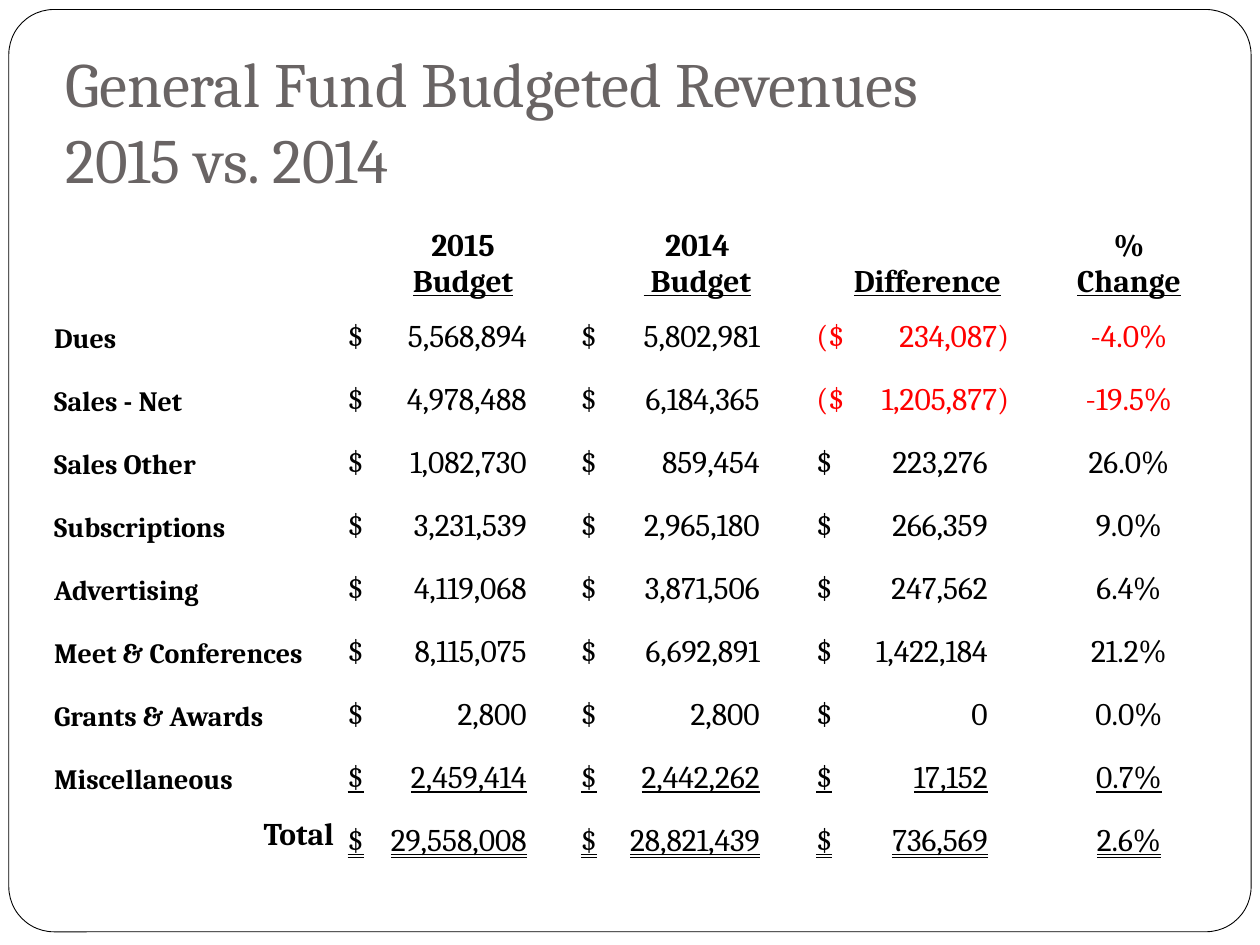
from dataclasses import dataclass
from typing import NamedTuple, Optional

from lxml.etree import SubElement
from pptx import Presentation
from pptx.dml.color import RGBColor
from pptx.enum.shapes import MSO_SHAPE as Shape
from pptx.enum.text import MSO_ANCHOR as Anchor, MSO_UNDERLINE as Underline, PP_ALIGN as Align
from pptx.oxml.ns import qn
from pptx.util import Inches, Pt


@dataclass(frozen=True)
class Theme:
    font: str = "Cambria"
    ink: RGBColor = RGBColor(0x00, 0x00, 0x00)
    title_ink: RGBColor = RGBColor(0x69, 0x64, 0x64)
    loss_ink: RGBColor = RGBColor(0xFF, 0x00, 0x00)
    paper: RGBColor = RGBColor(0xFF, 0xFF, 0xFF)
    title_size: int = 36
    figure_size: int = 18
    label_size: int = 16


class Area(NamedTuple):
    """Left, top, width and height as shares of the slide's size."""
    left: float
    top: float
    width: float
    height: float


class Column(NamedTuple):
    """Heading lines, width, and right-aligned tab stop, in inches."""
    heading: tuple[str, ...]
    width: float
    stop: Optional[float] = None


class Revenue(NamedTuple):
    label: str
    figures: tuple[str, str, str, str]
    underline: object = None


THEME = Theme()
SLIDE_WIDTH, SLIDE_HEIGHT = Inches(10), Inches(7.5)
FRAME = Area(0.007, 0.01, 0.986, 0.976)
TITLE = Area(0.042, 0.044, 0.896, 0.177)
TABLE = Area(0.042, 0.21, 0.925, 0.7)
HEADING_HEIGHT, FIRST_HEIGHT = Inches(0.81), Inches(0.44)
TIGHT = (0.01, 0.01, 0.01, 0)
ROOMY = (0.1, 0.05, 0.1, 0.05)
PARENTHESIS_OVERHANG = 0.17

COLUMNS = (
    Column((), 2.33),
    Column(("2015", "Budget"), 1.85, 1.42),
    Column(("2014", " Budget"), 1.87, 1.42),
    Column(("Difference",), 1.78, 1.36),
    Column(("%", "Change"), 1.42),
)
REVENUES = (
    Revenue("Dues", ("5,568,894", "5,802,981", "(234,087)", "-4.0%")),
    Revenue("Sales - Net", ("4,978,488", "6,184,365", "(1,205,877)", "-19.5%")),
    Revenue("Sales Other", ("1,082,730", "859,454", "223,276", "26.0%")),
    Revenue("Subscriptions", ("3,231,539", "2,965,180", "266,359", "9.0%")),
    Revenue("Advertising", ("4,119,068", "3,871,506", "247,562", "6.4%")),
    Revenue("Meet & Conferences", ("8,115,075", "6,692,891", "1,422,184", "21.2%")),
    Revenue("Grants & Awards", ("2,800", "2,800", "0", "0.0%")),
    Revenue("Miscellaneous", ("2,459,414", "2,442,262", "17,152", "0.7%"), True),
    Revenue("Total", ("29,558,008", "28,821,439", "736,569", "2.6%"), Underline.DOUBLE_LINE),
)


def place(area: Area) -> tuple[int, int, int, int]:
    return (int(area.left * SLIDE_WIDTH), int(area.top * SLIDE_HEIGHT),
            int(area.width * SLIDE_WIDTH), int(area.height * SLIDE_HEIGHT))


def set_margins(target, margins: tuple[float, float, float, float]) -> None:
    (target.margin_left, target.margin_top,
     target.margin_right, target.margin_bottom) = map(Inches, margins)


def style(para, size: int, color: RGBColor = THEME.ink, bold: bool = False,
          underline=None, align=Align.LEFT) -> None:
    para.alignment = align
    for span in para.runs:
        font = span.font
        font.name, font.size, font.bold = THEME.font, Pt(size), bold
        font.color.rgb = color
        font.underline = underline


def add_right_tab(para, inches: float) -> None:
    stops = SubElement(para._p.get_or_add_pPr(), qn("a:tabLst"))
    SubElement(stops, qn("a:tab"), pos=str(Inches(inches)), algn="r")


def add_frame(slide) -> None:
    frame = slide.shapes.add_shape(Shape.ROUNDED_RECTANGLE, *place(FRAME))
    frame.adjustments[0] = 0.049
    frame.shadow.inherit = False
    frame.fill.solid()
    frame.fill.fore_color.rgb = THEME.paper
    frame.line.color.rgb = THEME.ink
    frame.line.width = Pt(0.5)


def add_title(slide) -> None:
    text_frame = slide.shapes.add_textbox(*place(TITLE)).text_frame
    text_frame.word_wrap = True
    text_frame.vertical_anchor = Anchor.BOTTOM
    set_margins(text_frame, (0.1, 0.05, 0.1, 0.1))
    text_frame.text = "General Fund Budgeted Revenues\v2015 vs. 2014"
    style(text_frame.paragraphs[0], THEME.title_size, THEME.title_ink)


def fill_heading(cell, lines: tuple[str, ...]) -> None:
    cell.text_frame.text = "\n".join(lines)
    paras = cell.text_frame.paragraphs
    for para in paras:
        style(para, THEME.figure_size, bold=True, align=Align.CENTER)
    for span in paras[-1].runs:
        span.font.underline = True


def fill_label(cell, label: str) -> None:
    cell.text_frame.text = label
    para = cell.text_frame.paragraphs[0]
    if label == "Total":
        set_margins(cell, ROOMY)
        style(para, THEME.figure_size, bold=True, align=Align.RIGHT)
    else:
        style(para, THEME.label_size, bold=True)


def fill_figure(cell, figure: str, column: Column, underline) -> None:
    """Centre a percentage; split an amount into a dollar sign and a tabbed number."""
    loss = figure.startswith(("(", "-"))
    color = THEME.loss_ink if loss else THEME.ink
    para = cell.text_frame.paragraphs[0]
    if column.stop is None:
        para.text = figure
        style(para, THEME.figure_size, color, underline=underline, align=Align.CENTER)
        return
    para.text = ("($" if loss else "$") + "\t" + figure.lstrip("(")
    style(para, THEME.figure_size, color, underline=underline)
    add_right_tab(para, column.stop + (PARENTHESIS_OVERHANG if loss else 0))


def add_revenue_table(slide) -> None:
    left, top, width, height = place(TABLE)
    table = slide.shapes.add_table(len(REVENUES) + 1, len(COLUMNS),
                                   left, top, width, height).table
    table.first_row = table.horz_banding = False
    for grid_column, column in zip(table.columns, COLUMNS):
        grid_column.width = Inches(column.width)
    later_height = (height - HEADING_HEIGHT - FIRST_HEIGHT) // (len(REVENUES) - 1)
    heights = [HEADING_HEIGHT, FIRST_HEIGHT] + [later_height] * (len(REVENUES) - 1)
    for grid_row, row_height in zip(table.rows, heights):
        grid_row.height = row_height
    for cell in table.iter_cells():
        cell.fill.background()
        cell.vertical_anchor = Anchor.BOTTOM
        set_margins(cell, TIGHT)
    for index, column in enumerate(COLUMNS):
        fill_heading(table.cell(0, index), column.heading)
    for row, revenue in enumerate(REVENUES, start=1):
        fill_label(table.cell(row, 0), revenue.label)
        for index, figure in enumerate(revenue.figures, start=1):
            fill_figure(table.cell(row, index), figure, COLUMNS[index], revenue.underline)


def main() -> None:
    deck = Presentation()
    deck.slide_width, deck.slide_height = SLIDE_WIDTH, SLIDE_HEIGHT
    page = deck.slides.add_slide(deck.slide_layouts[6])
    add_frame(page)
    add_title(page)
    add_revenue_table(page)
    deck.save("out.pptx")


if __name__ == "__main__":
    main()
